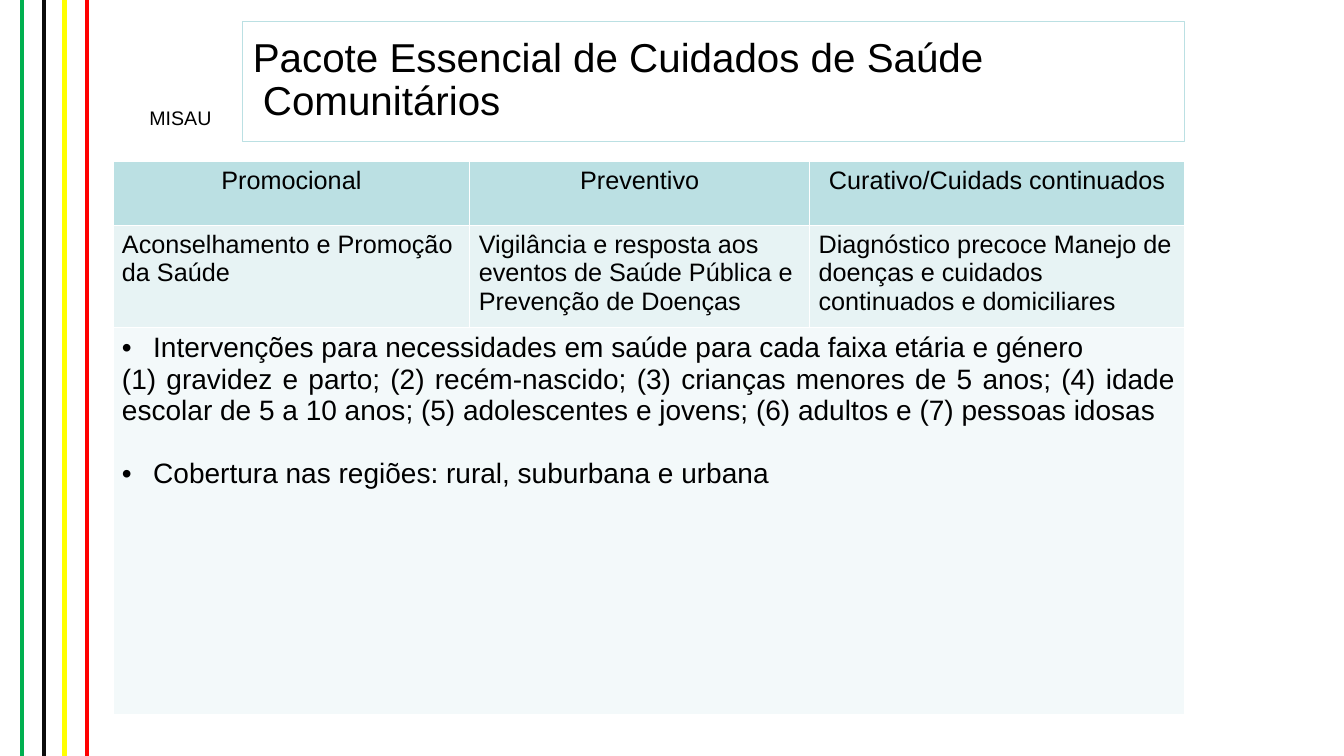
from lxml import etree
from pptx import Presentation
from pptx.dml.color import RGBColor
from pptx.enum.shapes import MSO_CONNECTOR, MSO_SHAPE
from pptx.enum.text import MSO_ANCHOR, PP_ALIGN
from pptx.oxml.ns import qn
from pptx.util import Emu, Pt

PX = 9144
STRAIGHT = MSO_CONNECTOR.STRAIGHT
RECTANGLE = MSO_SHAPE.RECTANGLE
TOP, MIDDLE = MSO_ANCHOR.TOP, MSO_ANCHOR.MIDDLE
LEFT, CENTER, JUSTIFY = PP_ALIGN.LEFT, PP_ALIGN.CENTER, PP_ALIGN.JUSTIFY

SLIDE_WIDTH, SLIDE_HEIGHT = 1333, 750
STRIPES = [(22, "00B050"), (44, "0C0C0C"), (64, "FFFF00"), (86, "FF0000")]
COLUMN_WIDTHS = [354, 337, 372]
ROW_HEIGHTS = [64, 101, 384]
HEADINGS = ["Promocional", "Preventivo", "Curativo/Cuidads continuados"]
SERVICES = [
    "Aconselhamento e Promoção da Saúde",
    "Vigilância e resposta aos eventos de Saúde Pública e Prevenção de Doenças",
    "Diagnóstico precoce Manejo de doenças e cuidados continuados e domiciliares",
]
INTERVENTIONS = "Intervenções para necessidades em saúde para cada faixa etária e género"
AGE_GROUPS = (
    "(1) gravidez e parto; (2) recém-nascido; (3) crianças menores de 5 anos; "
    "(4) idade escolar de 5 a 10 anos; (5) adolescentes e jovens; "
    "(6) adultos e (7) pessoas idosas"
)
COVERAGE = "Cobertura nas regiões: rural, suburbana e urbana"


def px(length):
    """Turn px into EMU."""
    return Emu(length * PX)


def color(hex_code):
    """Turn a hex string into a colour."""
    return RGBColor.from_string(hex_code)


def write(paragraph, text, size=18, align=LEFT, hanging=0, bullet=None, before=0, spacing=None):
    """Write formatted text into a paragraph."""
    properties = paragraph._p.get_or_add_pPr()
    if hanging:
        properties.set("marL", str(px(hanging)))
        properties.set("indent", str(px(-hanging)))
    if bullet:
        etree.SubElement(properties, qn("a:buFont"), typeface="Arial")
        etree.SubElement(properties, qn("a:buChar"), char=bullet)
    paragraph.alignment = align
    if before:
        paragraph.space_before = Pt(before)
    if spacing:
        paragraph.line_spacing = spacing
    run = paragraph.add_run()
    run.text = text
    run.font.name = "Arial"
    run.font.size = Pt(size)
    run.font.bold = False
    run.font.color.rgb = color("000000")


def set_frame(holder, sides, ends, anchor):
    """Set the margins and anchor of a text frame or cell."""
    holder.margin_left = holder.margin_right = px(sides)
    holder.margin_top = holder.margin_bottom = px(ends)
    holder.vertical_anchor = anchor


def add_stripe(slide, x, hex_code):
    """Draw one full-height flag stripe."""
    stripe = slide.shapes.add_connector(STRAIGHT, px(x), 0, px(x), px(SLIDE_HEIGHT))
    stripe.line.color.rgb = color(hex_code)
    stripe.line.width = Pt(3)
    etree.SubElement(stripe._element.spPr, qn("a:effectLst"))


def add_ministry(slide):
    """Add the ministry label."""
    ministry = slide.shapes.add_textbox(px(107), px(100), px(144), px(34)).text_frame
    ministry.word_wrap = True
    set_frame(ministry, 10, 5, TOP)
    write(ministry.paragraphs[0], "MISAU", size=14, align=CENTER)


def add_title(slide):
    """Add the framed title."""
    title = slide.shapes.add_shape(RECTANGLE, px(241), px(21), px(934), px(119))
    title.shadow.inherit = False
    title.fill.solid()
    title.fill.fore_color.rgb = color("FFFFFF")
    title.line.color.rgb = color("BBE0E3")
    title.line.width = Pt(0.75)
    title.text_frame.word_wrap = True
    set_frame(title.text_frame, 10, 5, MIDDLE)
    write(title.text_frame.paragraphs[0], "Pacote Essencial de Cuidados de Saúde Comunitários",
          size=28.8, hanging=10, spacing=0.9)


def style_cell(cell, fill):
    """Give a cell its white borders, margins and fill."""
    properties = cell._tc.get_or_add_tcPr()
    for side in ("lnL", "lnR", "lnT", "lnB"):
        border = etree.SubElement(properties, qn(f"a:{side}"), w=str(Pt(1)))
        solid = etree.SubElement(border, qn("a:solidFill"))
        etree.SubElement(solid, qn("a:srgbClr"), val="FFFFFF")
    set_frame(cell, 9, 5, TOP)
    cell.fill.solid()
    cell.fill.fore_color.rgb = color(fill)


def add_care_table(slide):
    """Add the table of care types with its merged scope row."""
    care = slide.shapes.add_table(
        len(ROW_HEIGHTS), len(COLUMN_WIDTHS), px(112), px(160),
        px(sum(COLUMN_WIDTHS)), px(sum(ROW_HEIGHTS))).table
    care.first_row = care.horz_banding = False
    for column, width in zip(care.columns, COLUMN_WIDTHS):
        column.width = px(width)
    for row, height, fill in zip(care.rows, ROW_HEIGHTS, ["BBE0E3", "E7F3F4", "F3F9FA"]):
        row.height = px(height)
        for cell in row.cells:
            style_cell(cell, fill)
    for index, (heading, service) in enumerate(zip(HEADINGS, SERVICES)):
        write(care.cell(0, index).text_frame.paragraphs[0], heading, align=CENTER)
        write(care.cell(1, index).text_frame.paragraphs[0], service)

    scope = care.cell(2, 0)
    scope.merge(care.cell(2, 2))
    scope_text = scope.text_frame
    write(scope_text.paragraphs[0], INTERVENTIONS, size=20, align=JUSTIFY, hanging=31, bullet="•")
    write(scope_text.add_paragraph(), AGE_GROUPS, size=20, align=JUSTIFY)
    write(scope_text.add_paragraph(), COVERAGE, size=20, align=JUSTIFY, hanging=31, bullet="•",
          before=23)


def main():
    """Build the slide and save it."""
    deck = Presentation()
    deck.slide_width, deck.slide_height = px(SLIDE_WIDTH), px(SLIDE_HEIGHT)
    slide = deck.slides.add_slide(deck.slide_layouts[6])
    for x, hex_code in STRIPES:
        add_stripe(slide, x, hex_code)
    add_ministry(slide)
    add_title(slide)
    add_care_table(slide)
    deck.save("out.pptx")


if __name__ == "__main__":
    main()
